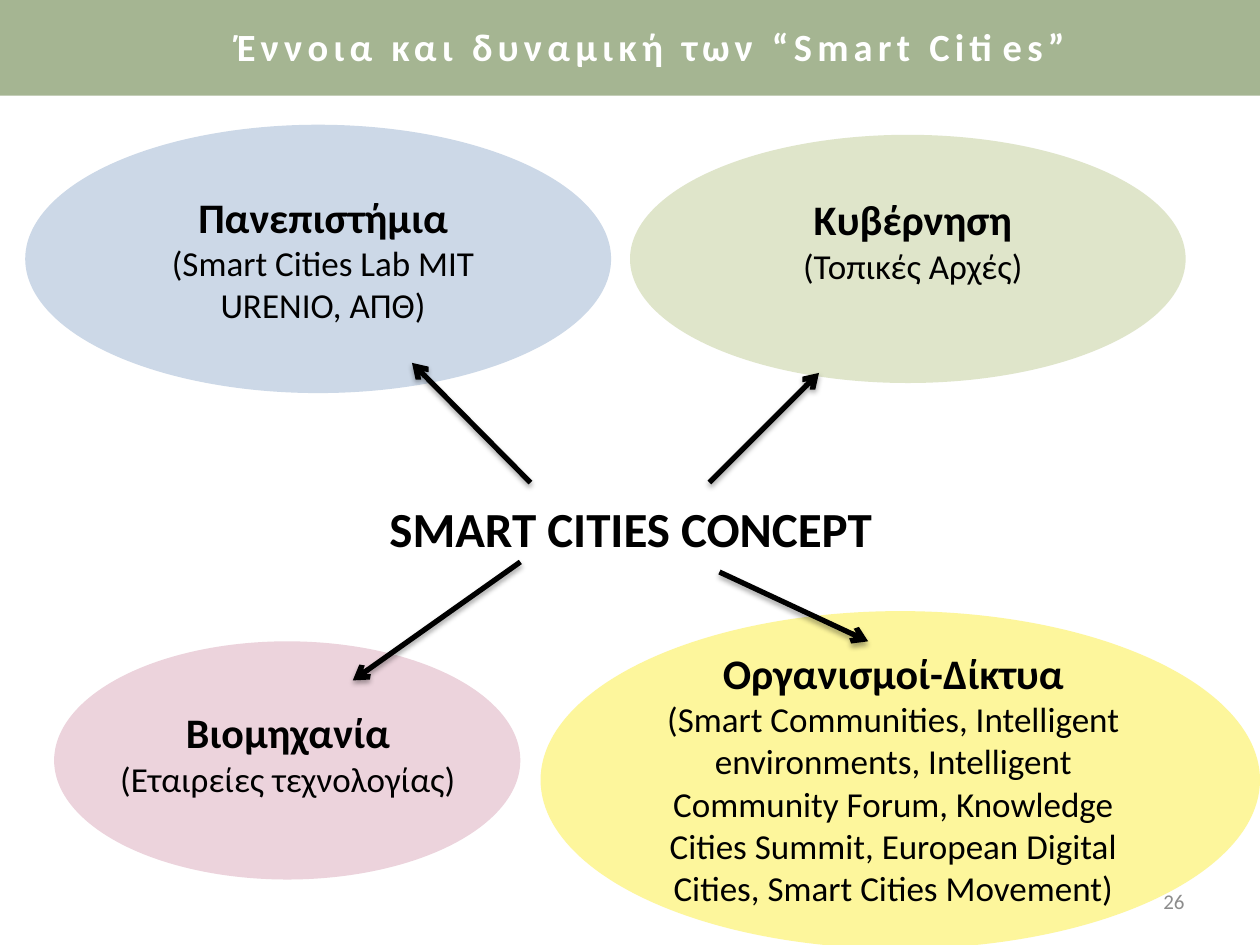
from lxml.etree import SubElement
from pptx import Presentation
from pptx.dml.color import RGBColor
from pptx.enum.shapes import MSO_CONNECTOR, MSO_SHAPE
from pptx.enum.text import MSO_ANCHOR, PP_ALIGN
from pptx.oxml import parse_xml
from pptx.oxml.ns import nsdecls, qn
from pptx.util import Inches, Pt

TITLE = "Έννοια και δυναμική των “Smart Cities”"
CONCEPT = "SMART CITIES CONCEPT"
PAGE_NUMBER = "26"

ACTORS = [
    {"heading": "Πανεπιστήμια",
     "details": ["(Smart Cities Lab MIT", "URENIO, ΑΠΘ)"],
     "color": "CCD8E7", "ellipse": (0.2, 0.99, 4.65, 2.13),
     "text": (0.83, 1.47, 3.47, 1.18), "arrow": (4.21, 3.83, 3.27, 2.88)},
    {"heading": "Κυβέρνηση",
     "details": ["(Τοπικές Αρχές)"],
     "color": "DFE5CA", "ellipse": (5, 1.07, 4.41, 1.97),
     "text": (5.79, 1.49, 2.91, 0.84), "arrow": (5.63, 3.83, 6.5, 2.96)},
    {"heading": "Βιομηχανία",
     "details": ["(Εταιρείες τεχνολογίας)"],
     "color": "ECD3DC", "ellipse": (0.43, 5.09, 3.7, 1.89),
     "text": (0.83, 5.56, 2.91, 0.84), "arrow": (4.13, 4.46, 2.8, 5.4)},
    {"heading": "Οργανισμοί-Δίκτυα",
     "details": ["(Smart Communities, Intelligent environments, Intelligent "
                 "Community Forum, Knowledge Cities Summit, European Digital "
                 "Cities, Smart Cities Movement)"],
     "color": "FDF69C", "ellipse": (4.29, 4.85, 5.71, 2.68),
     "text": (5.08, 5.09, 4.02, 2.19), "arrow": (5.71, 4.54, 6.89, 5.09)},
]

SHADOW = (
    f'<a:effectLst {nsdecls("a")}>'
    f'<a:outerShdw blurRad="{Pt(3.1)}" dist="{Pt(1.8)}" dir="5400000" rotWithShape="0">'
    '<a:srgbClr val="000000"><a:alpha val="35000"/></a:srgbClr>'
    '</a:outerShdw></a:effectLst>'
)


def rgb(color):
    return RGBColor.from_string(color)


def add_filled_shape(slide, kind, box, color):
    shape = slide.shapes.add_shape(kind, *map(Inches, box))
    shape.shadow.inherit = False
    shape.fill.solid()
    shape.fill.fore_color.rgb = rgb(color)
    shape.line.fill.background()


def add_text(slide, box, lines, color="000000", align=PP_ALIGN.CENTER):
    text_frame = slide.shapes.add_textbox(*map(Inches, box)).text_frame
    text_frame.word_wrap = True
    text_frame.text = "\n".join(text for text, size, bold in lines)
    for paragraph, (text, size, bold) in zip(text_frame.paragraphs, lines):
        paragraph.alignment = align
        for run in paragraph.runs:
            run.font.name = "Calibri"
            run.font.size = Pt(size)
            run.font.bold = bold
            run.font.color.rgb = rgb(color)
    return text_frame


def add_arrow(slide, points):
    connector = slide.shapes.add_connector(MSO_CONNECTOR.STRAIGHT, *map(Inches, points))
    connector.line.color.rgb = rgb("000000")
    connector.line.width = Pt(3)
    SubElement(connector.line._get_or_add_ln(), qn("a:tailEnd"), type="arrow")
    connector._element.spPr.append(parse_xml(SHADOW))


def main():
    presentation = Presentation()
    presentation.slide_width = Inches(10)
    presentation.slide_height = Inches(7.5)
    slide = presentation.slides.add_slide(presentation.slide_layouts[6])

    add_filled_shape(slide, MSO_SHAPE.RECTANGLE, (0, 0, 10, 0.76), "A5B592")
    title = add_text(slide, (1.31, 0.13, 7.72, 0.47), [(TITLE, 22, True)], "FFFFFF")
    title.paragraphs[0].runs[0].font._element.set("spc", "300")
    number = add_text(slide, (7.17, 6.95, 2.33, 0.4), [(PAGE_NUMBER, 12, False)],
                      "8C8C8C", PP_ALIGN.RIGHT)
    number.vertical_anchor = MSO_ANCHOR.MIDDLE

    for actor in ACTORS:
        add_filled_shape(slide, MSO_SHAPE.OVAL, actor["ellipse"], actor["color"])
        details = [(detail, 20, False) for detail in actor["details"]]
        add_text(slide, actor["text"], [(actor["heading"], 24, True)] + details)

    add_text(slide, (2.64, 3.91, 4.73, 0.57), [(CONCEPT, 28, True)])
    for actor in ACTORS:
        add_arrow(slide, actor["arrow"])

    presentation.save("out.pptx")


if __name__ == "__main__":
    main()
